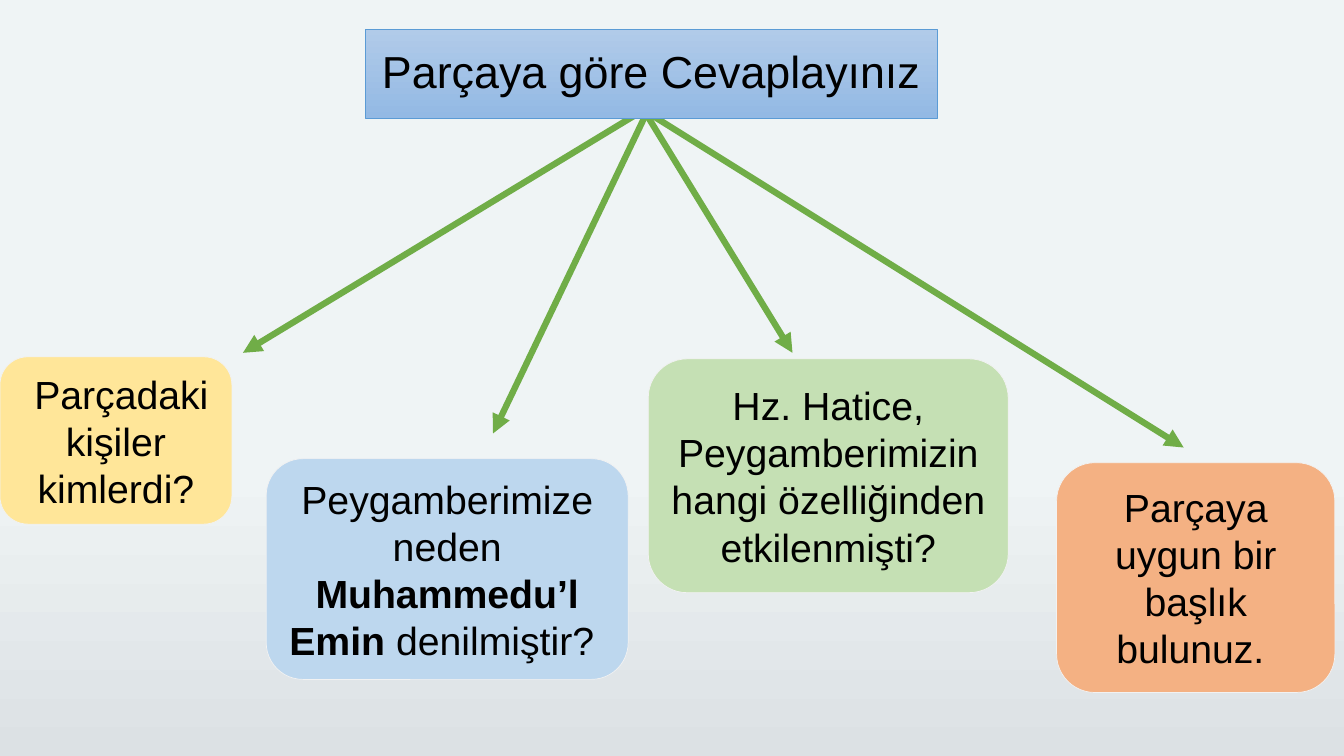
from lxml import etree
from pptx import Presentation
from pptx.dml.color import RGBColor
from pptx.enum.dml import MSO_THEME_COLOR
from pptx.enum.shapes import MSO_CONNECTOR, MSO_SHAPE
from pptx.enum.text import MSO_ANCHOR, MSO_AUTO_SIZE, PP_ALIGN
from pptx.oxml.ns import qn
from pptx.util import Inches, Pt

ROUND = MSO_SHAPE.ROUNDED_RECTANGLE
LINE = MSO_CONNECTOR.STRAIGHT
MIDDLE = MSO_ANCHOR.MIDDLE
CENTER = PP_ALIGN.CENTER
FIXED = MSO_AUTO_SIZE.NONE
FONT = "Arial"

ARROWS = [
    ((6.42, 1.07), (2.41, 3.5)),
    ((6.49, 0.96), (4.89, 4.3)),
    ((6.39, 1.1), (7.86, 3.5)),
    ((6.3, 1.04), (11.74, 4.44)),
]
CARDS = [
    ((0, 3.54, 2.3, 1.66), "FFE699", [(" Parçadaki kişiler kimlerdi?", False)]),
    ((2.64, 4.55, 3.59, 2.19), "BDD7EE", [
        ("Peygamberimize neden ", False),
        ("Muhammedu’l Emin ", True),
        ("denilmiştir? ", False),
    ]),
    ((6.43, 3.56, 3.57, 2.32), "C5E0B4", [
        ("Hz. Hatice, Peygamberimizin hangi özelliğinden etkilenmişti?", False),
    ]),
    ((10.48, 4.59, 2.76, 2.28), "F4B183", [
        ("Parçaya uygun bir başlık bulunuz. ", False),
    ]),
]


def color(code):
    """Turn a hex string into a colour."""
    return RGBColor.from_string(code)


def shade(fill, stops):
    """Fill from top to bottom with two (position, colour) stops."""
    fill.gradient()
    fill.gradient_angle = 270
    for stop, (place, code) in zip(fill.gradient_stops, stops):
        stop.position = place
        stop.color.rgb = color(code)


def edge(line, code, width):
    """Set the colour and width of a line."""
    line.color.rgb = color(code)
    line.width = Pt(width)


def write(shape, runs, size):
    """Write centred (text, bold) runs in a shape."""
    frame = shape.text_frame
    frame.auto_size = FIXED
    frame.word_wrap = True
    frame.vertical_anchor = MIDDLE
    para = frame.paragraphs[0]
    para.alignment = CENTER
    para.font.name = FONT
    para.font.size = Pt(size)
    para.font.color.rgb = color("000000")
    for text, bold in runs:
        run = para.add_run()
        run.text = text
        if bold:
            run.font.bold = True
    return para


def arrow(slide, start, end):
    """Draw a green arrow from start to end."""
    points = [Inches(n) for n in start + end]
    link = slide.shapes.add_connector(LINE, *points)
    edge(link.line, "70AD47", 4.5)
    props = link.element.spPr
    etree.SubElement(props.find(qn("a:ln")), qn("a:tailEnd"), type="triangle")
    etree.SubElement(props, qn("a:effectLst"))


def card(slide, box, code, runs):
    """Draw a rounded question card in its box."""
    shape = slide.shapes.add_shape(ROUND, *[Inches(n) for n in box])
    shape.shadow.inherit = False
    shape.fill.solid()
    shape.fill.fore_color.rgb = color(code)
    edge(shape.line, "F2F2F2", 0.5)
    write(shape, runs, 28)


def banner(slide, box):
    """Place the title in its box, in front of the arrows."""
    title = slide.shapes.title
    title.left, title.top, title.width, title.height = [Inches(n) for n in box]
    shade(title.fill, [(0, "B1CBE9"), (1, "93B9E4")])
    edge(title.line, "5B9BD5", 0.5)
    write(title, [("Parçaya göre Cevaplayınız", False)], 32).line_spacing = 0.9
    title.element.getparent().append(title.element)


def main():
    """Build the slide and save it."""
    deck = Presentation()
    deck.slide_width = Inches(13.33)
    deck.slide_height = Inches(7.5)
    slide = deck.slides.add_slide(deck.slide_layouts.get_by_name("Title Only"))
    shade(slide.background.fill, [(0.62, "EFF4F5"), (1, "DCE1E4")])
    for start, end in ARROWS:
        arrow(slide, start, end)
    for box, code, runs in CARDS:
        card(slide, box, code, runs)
    banner(slide, (3.62, 0.29, 5.68, 0.88))
    deck.save("out.pptx")


if __name__ == "__main__":
    main()
